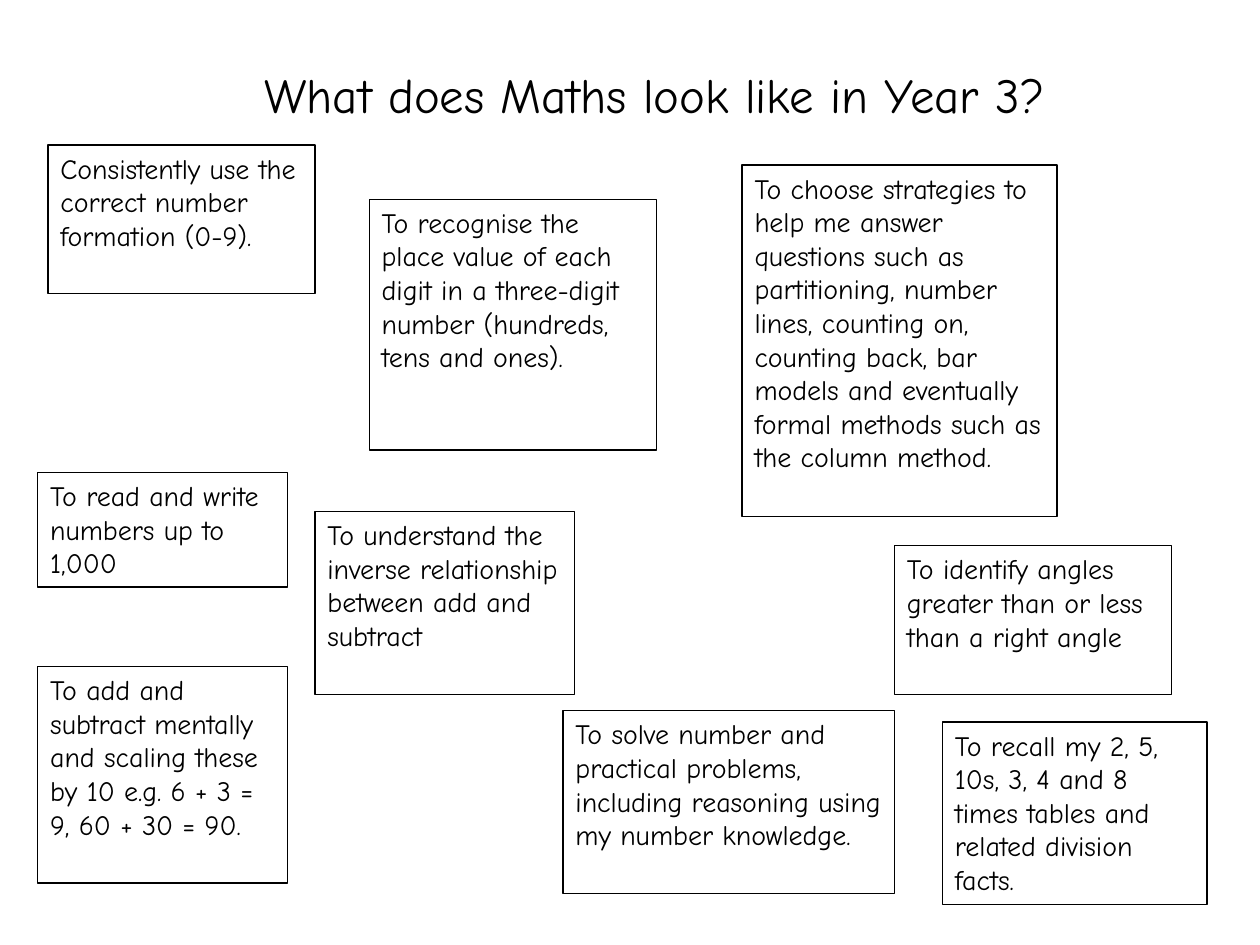
from dataclasses import dataclass

import pptx
import pptx.dml.color
import pptx.enum.shapes
import pptx.enum.text
import pptx.util

Pt = pptx.util.Pt


@dataclass(frozen=True)
class Theme:
    """Hold the colours, font and sizes of the slide."""

    ink: pptx.dml.color.RGBColor = pptx.dml.color.RGBColor(0, 0, 0)
    font: str = "Comic Neue"
    title_size: float = 27.9
    goal_size: float = 16
    line_width: float = 0.75
    side_inset: float = 7.2
    end_inset: float = 3.6


class SlideBuilder:
    """Add styled elements to one slide."""

    def __init__(self, slide, theme):
        self.slide = slide
        self.theme = theme

    def set_text(self, shape, text, size):
        """Fill a shape with one left-aligned paragraph and return it."""
        frame = shape.text_frame
        frame.text = text
        frame.word_wrap = True
        frame.auto_size = pptx.enum.text.MSO_AUTO_SIZE.NONE
        frame.vertical_anchor = pptx.enum.text.MSO_ANCHOR.TOP
        frame.margin_left = frame.margin_right = Pt(self.theme.side_inset)
        frame.margin_top = frame.margin_bottom = Pt(self.theme.end_inset)
        paragraph = frame.paragraphs[0]
        paragraph.alignment = pptx.enum.text.PP_ALIGN.LEFT
        paragraph.font.name = self.theme.font
        paragraph.font.size = Pt(size)
        paragraph.font.color.rgb = self.theme.ink
        return paragraph

    def title(self, text, left, top, width, height, indent):
        """Place the title with a left indent."""
        shape = self.slide.shapes.title
        shape.left, shape.top = Pt(left), Pt(top)
        shape.width, shape.height = Pt(width), Pt(height)
        paragraph = self.set_text(shape, text, self.theme.title_size)
        properties = paragraph._p.get_or_add_pPr()
        properties.set("marL", str(Pt(indent)))
        properties.set("indent", "0")

    def goal(self, text, left, top, width, height):
        """Add an outlined box with a learning goal."""
        shape = self.slide.shapes.add_shape(
            pptx.enum.shapes.MSO_SHAPE.RECTANGLE,
            Pt(left), Pt(top), Pt(width), Pt(height),
        )
        shape.shadow.inherit = False
        shape.fill.background()
        shape.line.color.rgb = self.theme.ink
        shape.line.width = Pt(self.theme.line_width)
        self.set_text(shape, text, self.theme.goal_size)


GOALS = [
    ("Consistently use the correct number formation (0-9).", 27.4, 82.8, 152.6, 85),
    ("To recognise the place value of each digit in a three-digit number "
     "(hundreds, tens and ones).", 211, 113.8, 164.2, 143.3),
    ("To identify angles greater than or less than a right angle",
     511.2, 311.8, 158.4, 85),
    ("To choose strategies to help me answer questions such as partitioning, "
     "number lines, counting on, counting back, bar models and eventually "
     "formal methods such as the column method.", 424.1, 94.3, 180, 200.9),
    ("To read and write numbers up to 1,000", 21.6, 270, 142.6, 65.5),
    ("To solve number and practical problems, including reasoning using my "
     "number knowledge.", 321.8, 406.1, 189.4, 104.4),
    ("To add and subtract mentally and scaling these by 10 e.g. "
     "6 + 3 = 9, 60 + 30 = 90.", 21.6, 380.9, 142.6, 123.8),
    ("To understand the inverse relationship between add and subtract",
     180, 292.3, 148.3, 104.4),
    ("To recall my 2, 5, 10s, 3, 4 and 8 times tables and related division "
     "facts.", 538.6, 412.6, 151.2, 104.4),
]


def main():
    """Build and save the slide."""
    presentation = pptx.Presentation()
    presentation.slide_width, presentation.slide_height = Pt(720), Pt(540)
    title_only = presentation.slide_layouts.get_by_name("Title Only")
    builder = SlideBuilder(presentation.slides.add_slide(title_only), Theme())
    builder.title("What does Maths look like in Year 3?", 108, 33.1, 540, 61.2, 36)
    for goal in GOALS:
        builder.goal(*goal)
    presentation.save("out.pptx")


if __name__ == "__main__":
    main()
